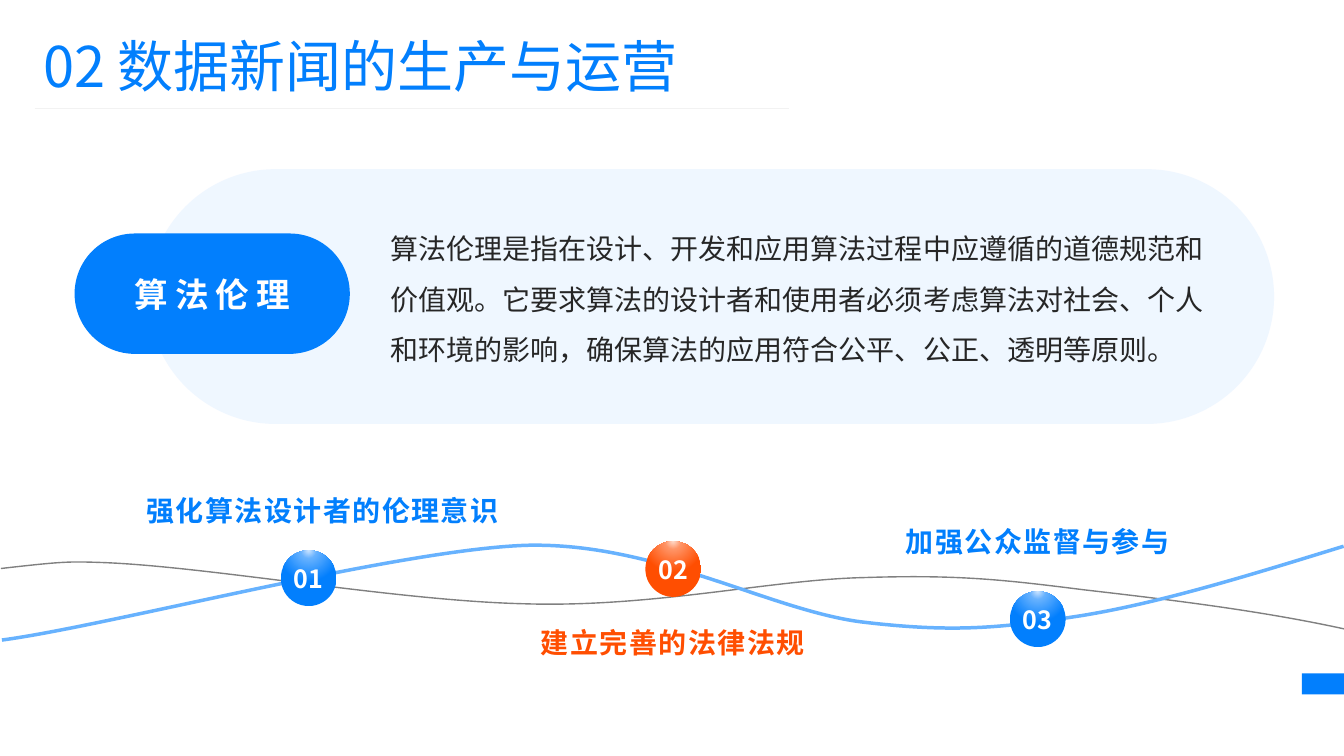
from lxml.etree import SubElement
from pptx import Presentation
from pptx.dml.color import RGBColor
from pptx.enum.shapes import MSO_CONNECTOR as CONN, MSO_SHAPE as SHAPE
from pptx.enum.text import MSO_ANCHOR as ANCHOR, PP_ALIGN as ALIGN
from pptx.oxml import parse_xml
from pptx.oxml.ns import nsdecls, qn
from pptx.util import Pt

FONT = "Noto Sans CJK SC"
BLUE, ORANGE, WHITE, INK = "027FFD", "FF4E01", "FFFFFF", "262626"
SKY, PALE, GREY, RULE = "67B2FE", "CCE5FF", "808080", "F2F2F2"
BALL_TINTS = {BLUE: (PALE, SKY), ORANGE: ("FFDCCC", "FF9567")}


def rgb(color):
    return RGBColor.from_string(color)


def write(s, text, size, color, bold=False, spacing=0, align=ALIGN.CENTER,
          anchor=ANCHOR.MIDDLE, inset=True, wrap=True, leading=None):
    tf = s.text_frame
    tf.word_wrap = wrap
    tf.vertical_anchor = anchor
    if not inset:
        tf.margin_left = tf.margin_right = tf.margin_top = tf.margin_bottom = 0
    p = tf.paragraphs[0]
    p.alignment = align
    if leading:
        p.line_spacing = leading
    r = p.add_run()
    r.text = text
    r.font.size, r.font.bold, r.font.name = Pt(size), bold, FONT
    r.font.color.rgb = rgb(color)
    rPr = r.font._element
    SubElement(rPr, qn("a:ea")).set("typeface", FONT)
    if spacing:
        rPr.set("spc", str(spacing * 100))


def add_shape(slide, kind, x, y, w, h, color=None, alpha=None):
    s = slide.shapes.add_shape(kind, Pt(x), Pt(y), Pt(w), Pt(h))
    s.shadow.inherit = False
    s.line.fill.background()
    if kind == SHAPE.ROUNDED_RECTANGLE:
        s.adjustments[0] = 0.5
    if color is None:
        s.fill.background()
        return s
    s.fill.solid()
    s.fill.fore_color.rgb = rgb(color)
    if alpha:
        clr = s._element.spPr.find(qn("a:solidFill"))[0]
        SubElement(clr, qn("a:alpha")).set("val", str(alpha * 1000))
    return s


def add_curve(slide, x, y, start, segments, color, width):
    """Smooth line; each segment holds two control points and an end point."""
    def emu(pt):
        return Pt(x + pt[0]), Pt(y + pt[1])

    builder = slide.shapes.build_freeform(*emu(start), scale=1.0)
    builder.add_line_segments([emu(seg[-1]) for seg in segments], close=False)
    s = builder.convert_to_shape()
    s.shadow.inherit = False
    s.fill.background()
    s.line.color.rgb = rgb(color)
    s.line.width = Pt(width)
    # Turn the straight segments into Bezier segments
    for line, seg in zip(list(s._element.iter(qn("a:lnTo"))), segments):
        path = line.getparent()
        bezier = SubElement(path, qn("a:cubicBezTo"))
        path.replace(line, bezier)
        for px, py in map(emu, seg):
            pt = SubElement(bezier, qn("a:pt"))
            pt.set("x", str(px - s.left))
            pt.set("y", str(py - s.top))


def add_ball(slide, x, y, size, number, color):
    s = add_shape(slide, SHAPE.OVAL, x, y, size, size, color)
    stops = zip((0, 21, 80), (*BALL_TINTS[color], color))
    gs = "".join(f'<a:gs pos="{pos * 1000}"><a:srgbClr val="{c}"/></a:gs>'
                 for pos, c in stops)
    gradient = parse_xml(
        f'<a:gradFill {nsdecls("a")} rotWithShape="1"><a:gsLst>{gs}</a:gsLst>'
        '<a:path path="circle"><a:fillToRect l="50000" t="-80000" r="50000"'
        ' b="180000"/></a:path></a:gradFill>')
    spPr = s._element.spPr
    spPr.replace(spPr.find(qn("a:solidFill")), gradient)
    write(s, number, 17.9, WHITE, bold=True, inset=False, wrap=False)


def header(slide, x, y, w, h):
    # Title
    s = slide.shapes.add_textbox(Pt(x), Pt(y), Pt(w), Pt(h))
    write(s, "02 数据新闻的生产与运营", 40, BLUE,
          align=ALIGN.LEFT, anchor=ANCHOR.TOP)
    # Thin rule under the title
    rule_x, rule_y = x + 1.2, y + h + 3.6
    s = slide.shapes.add_connector(CONN.STRAIGHT, Pt(rule_x), Pt(rule_y),
                                   Pt(rule_x + 538.6), Pt(rule_y))
    s.line.color.rgb = rgb(RULE)
    s.line.width = Pt(0.5)
    SubElement(s._element.spPr, qn("a:effectLst"))


def definition(slide, x, y, w, h):
    # Pale panel
    add_shape(slide, SHAPE.ROUNDED_RECTANGLE, x + 52.6, y, w - 52.6, h, PALE, 30)
    # Term
    s = add_shape(slide, SHAPE.ROUNDED_RECTANGLE, x, y + 46, 196.6, 86, BLUE)
    write(s, "算法伦理", 24, WHITE, bold=True, spacing=5, inset=False)
    # Explanation
    s = slide.shapes.add_textbox(Pt(x + 225.4), Pt(y + 36), Pt(598.3), Pt(101.5))
    write(s, "算法伦理是指在设计、开发和应用算法过程中应遵循的道德规范和价值观。"
             "它要求算法的设计者和使用者必须考虑算法对社会、个人和环境的影响，"
             "确保算法的应用符合公平、公正、透明等原则。",
          20, INK, align=ALIGN.LEFT, inset=False, leading=1.5)


def timeline(slide, x, y):
    # Two crossing waves
    add_curve(slide, x, y, (0.7, 57.1), [
        [(45.4, 52), (49, 52), (72.7, 52.8)],
        [(149, 55.6), (282.2, 80.1), (374.4, 82.3)],
        [(466.6, 85.2), (550.8, 65), (617, 63.6)],
        [(683.3, 61.4), (716.4, 65), (773.3, 72.2)],
        [(829.4, 78.7), (897.8, 86.6), (960, 100.2)]], GREY, 1)
    add_curve(slide, x, y, (1.4, 108.2), [
        [(77.8, 98.1), (284.4, 43.4), (376.6, 40.5)],
        [(468, 38.4), (549.4, 86.6), (614.9, 95.2)],
        [(681.1, 103.2), (715, 99.6), (771.8, 90.9)],
        [(829.4, 81.6), (894.2, 61.4), (959.8, 41.2)]], SKY, 2.5)
    # Steps: number, colour, ball corner, label, label box
    steps = [
        ("01", BLUE, (200.6, 44.1), "强化算法设计者的伦理意识", (96.5, 0.6, 267.8)),
        ("02", ORANGE, (461, 37.6), "建立完善的法律法规", (379.4, 94.8, 202.3)),
        ("03", BLUE, (721.4, 73.4), "加强公众监督与参与", (640.1, 22.5, 202.3))]
    for number, color, (bx, by), label, (lx, ly, lw) in steps:
        s = add_shape(slide, SHAPE.ROUNDED_RECTANGLE, x + lx, y + ly, lw, 30.2)
        write(s, label, 20, color, bold=True, spacing=1, inset=False)
        add_ball(slide, x + bx, y + by, 39.8, number, color)


def main():
    prs = Presentation()
    prs.slide_width, prs.slide_height = Pt(960), Pt(540)
    slide = prs.slides.add_slide(prs.slide_layouts[6])
    # Corner tab
    add_shape(slide, SHAPE.RECTANGLE, 930, 481, 30, 15, BLUE)
    definition(slide, 53.3, 120.8, 856.8, 182)
    timeline(slide, 0, 349)
    header(slide, 23.8, 18.7, 553, 55.4)
    prs.save("out.pptx")


if __name__ == "__main__":
    main()
